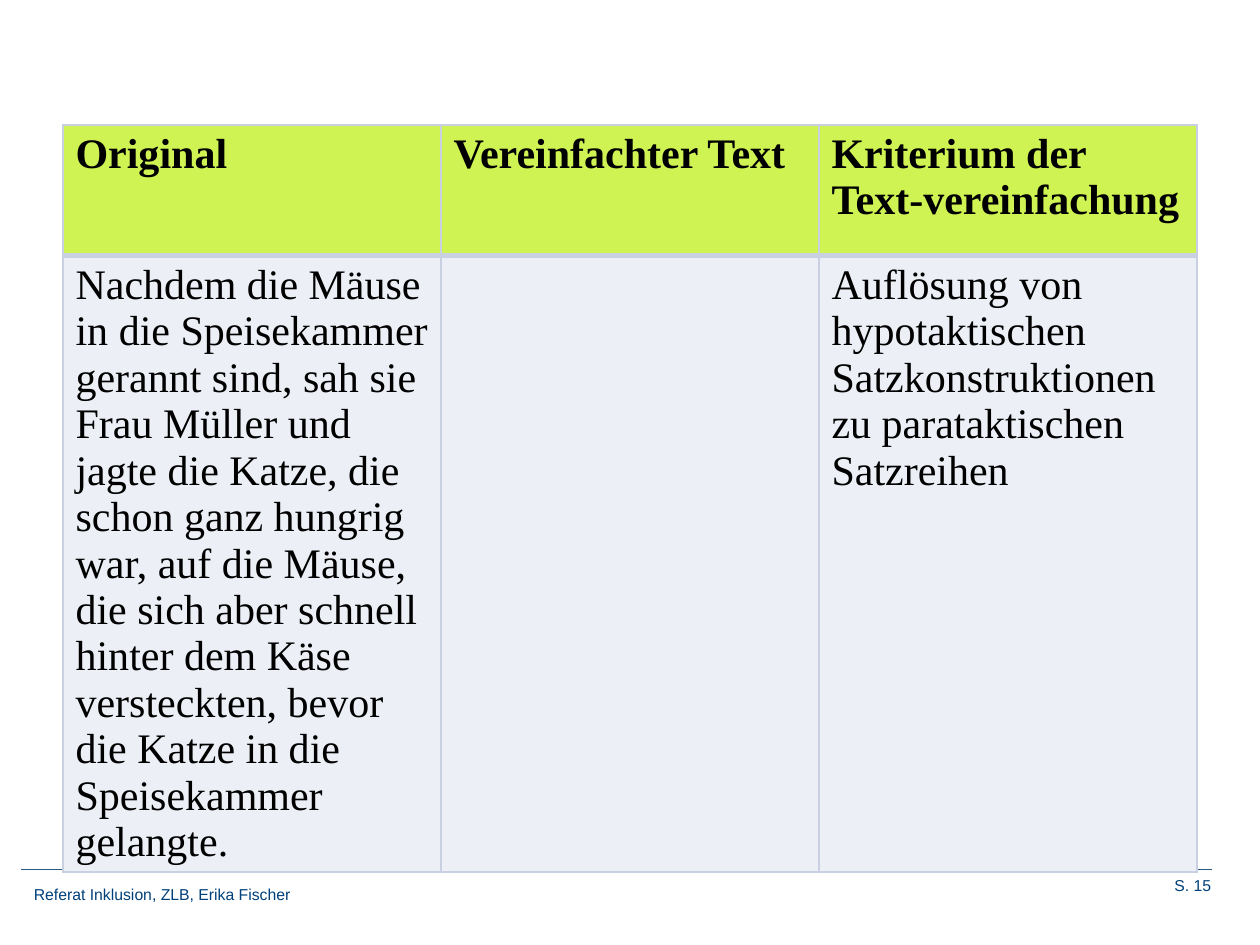
import pptx
import pptx.dml.color
import pptx.enum.shapes
import pptx.enum.text
import pptx.oxml
import pptx.oxml.ns
import pptx.util
from pptx.util import Inches

HEADER = ["Original", "Vereinfachter Text", "Kriterium der Text-vereinfachung"]
EXAMPLE = [
    "Nachdem die Mäuse in die Speisekammer gerannt sind, sah sie Frau Müller "
    "und jagte die Katze, die schon ganz hungrig war, auf die Mäuse, die sich "
    "aber schnell hinter dem Käse versteckten, bevor die Katze in die "
    "Speisekammer gelangte.",
    "",
    "Auflösung von hypotaktischen Satzkonstruktionen zu parataktischen Satzreihen",
]
FOOTERS = [
    # text, box, alignment
    ("Referat Inklusion, ZLB, Erika Fischer", (0.17, 6.97, 7.35, 0.25), "LEFT"),
    ("S. 15", (8.54, 6.9, 1.17, 0.33), "RIGHT"),
]
TABLE_LEFT, TABLE_TOP, TABLE_WIDTH = 0.5, 0.99, 9
ROW_HEIGHTS = [1.04, 4.89]
CELL_MARGIN_RIGHT = 0.08

THEME = {
    "table_font": "Times New Roman", "table_size": 24, "table_text": "000000",
    "footer_font": "Arial", "footer_size": 9, "footer_text": "00407A",
    "header_fill": "CFF353", "body_fill": "ECEFF5",
    "border": "C8D0E2", "rule": "2C5884",
}


def rgb(name):
    return pptx.dml.color.RGBColor.from_string(THEME[name])


def write(tf, text, style="table", bold=False, align="LEFT"):
    tf.word_wrap = True
    p = tf.paragraphs[0]
    p.alignment = getattr(pptx.enum.text.PP_ALIGN, align)
    r = p.add_run()
    r.text = text
    r.font.name = THEME[style + "_font"]
    r.font.size = pptx.util.Pt(THEME[style + "_size"])
    r.font.color.rgb = rgb(style + "_text")
    r.font.bold = bold


def set_borders(cell, **widths):
    """Draw the cell's sides, given as L, R, T, B in points, before its fill."""
    tcPr = cell._tc.get_or_add_tcPr()
    for i, (side, width) in enumerate(widths.items()):
        tcPr.insert(i, pptx.oxml.parse_xml(
            f'<a:ln{side} {pptx.oxml.ns.nsdecls("a")} w="{pptx.util.Pt(width)}">'
            f'<a:solidFill><a:srgbClr val="{THEME["border"]}"/></a:solidFill>'
            f'</a:ln{side}>'))


def add_rule(s):
    line = s.shapes.add_connector(
        pptx.enum.shapes.MSO_CONNECTOR.STRAIGHT,
        Inches(0.17), Inches(6.9), Inches(9.62), Inches(6.9))
    line.line.color.rgb = rgb("rule")
    line.line.width = pptx.util.Pt(0.75)
    line._element.spPr.append(
        pptx.oxml.parse_xml(f'<a:effectLst {pptx.oxml.ns.nsdecls("a")}/>'))


def add_comparison(s):
    rows = [HEADER, EXAMPLE]
    box = (TABLE_LEFT, TABLE_TOP, TABLE_WIDTH, sum(ROW_HEIGHTS))
    table = s.shapes.add_table(len(rows), len(HEADER), *map(Inches, box)).table
    for col in table.columns:
        col.width = Inches(TABLE_WIDTH / len(HEADER))
    for row, height in zip(table.rows, ROW_HEIGHTS):
        row.height = Inches(height)
    for i, texts in enumerate(rows):
        is_header = i == 0
        for j, text in enumerate(texts):
            cell = table.cell(i, j)
            cell.margin_right = Inches(CELL_MARGIN_RIGHT)
            cell.fill.solid()
            cell.fill.fore_color.rgb = rgb("header_fill" if is_header else "body_fill")
            set_borders(cell, L=1, R=1, T=1 if is_header else 3, B=3 if is_header else 1)
            if text:
                write(cell.text_frame, text, bold=is_header)


def main():
    prs = pptx.Presentation()
    prs.slide_width, prs.slide_height = Inches(10), Inches(7.5)
    s = prs.slides.add_slide(prs.slide_layouts[6])
    add_rule(s)
    add_comparison(s)
    for text, box, align in FOOTERS:
        tf = s.shapes.add_textbox(*map(Inches, box)).text_frame
        write(tf, text, style="footer", align=align)
    prs.save("out.pptx")


if __name__ == "__main__":
    main()
